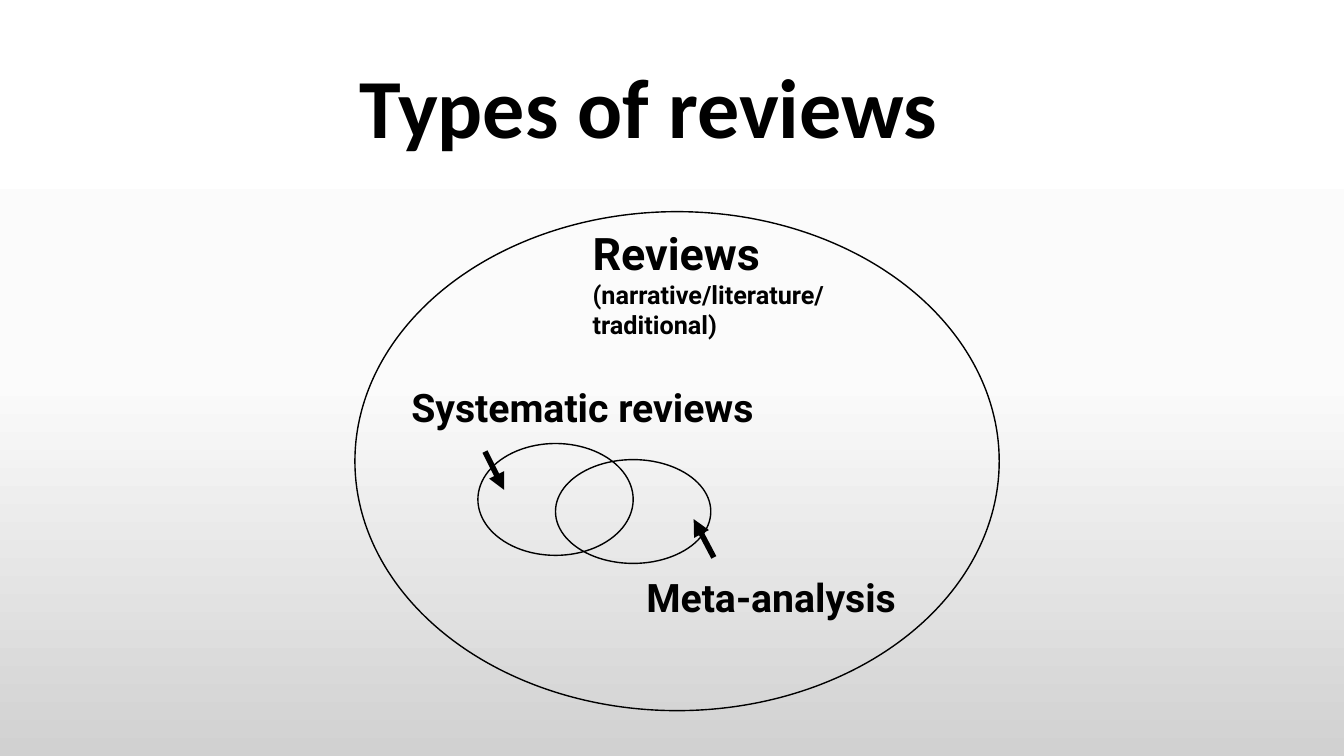
from copy import deepcopy

from lxml import etree
from pptx import Presentation
from pptx.dml.color import RGBColor
from pptx.enum.shapes import MSO_CONNECTOR, MSO_SHAPE
from pptx.enum.text import MSO_ANCHOR, MSO_AUTO_SIZE, PP_ALIGN
from pptx.oxml.ns import qn
from pptx.util import Inches, Pt

BLACK = RGBColor(0x00, 0x00, 0x00)
BACKGROUND_STOPS = [
    (0, RGBColor(0xFF, 0xFF, 0xFF)),
    (0.5, RGBColor(0xFB, 0xFB, 0xFB)),
    (1, RGBColor(0xD1, 0xD1, 0xD1)),
]
ELLIPSE = MSO_SHAPE.OVAL
STRAIGHT = MSO_CONNECTOR.STRAIGHT
BOTTOM = MSO_ANCHOR.BOTTOM
CENTER = PP_ALIGN.CENTER
GROW = MSO_AUTO_SIZE.SHAPE_TO_FIT_TEXT


def set_background(slide):
    fill = slide.background.fill
    fill.gradient()
    fill.gradient_angle = 270  # counter-clockwise, so top to bottom
    # A new gradient has two stops; add the middle one
    stop_list = slide.element.find(".//" + qn("a:gsLst"))
    stop_list.append(deepcopy(stop_list[0]))
    for stop, (position, color) in zip(fill.gradient_stops, BACKGROUND_STOPS):
        stop.position = position
        stop.color.rgb = color


def add_ellipse(slide, left, top, width, height):
    shape = slide.shapes.add_shape(
        ELLIPSE, Inches(left), Inches(top), Inches(width), Inches(height))
    shape.shadow.inherit = False
    shape.fill.background()
    shape.line.color.rgb = BLACK
    shape.line.width = Pt(1)


def add_text(slide, left, top, width, height, lines, font="Roboto",
             inset=(0.1, 0.05), wrap=False):
    """Add bold text; lines holds (text, size) pairs."""
    box = slide.shapes.add_textbox(
        Inches(left), Inches(top), Inches(width), Inches(height))
    text_frame = box.text_frame
    text_frame.word_wrap = wrap
    text_frame.margin_left = text_frame.margin_right = Inches(inset[0])
    text_frame.margin_top = text_frame.margin_bottom = Inches(inset[1])
    text_frame.text = "\n".join(text for text, size in lines)
    for paragraph, (text, size) in zip(text_frame.paragraphs, lines):
        run_font = paragraph.runs[0].font
        run_font.name = font
        run_font.size = Pt(size)
        run_font.bold = True
        run_font.color.rgb = BLACK
    return text_frame


def add_label(slide, left, top, width, text):
    text_frame = add_text(slide, left, top, width, 0.51, [(text, 28)],
                          inset=(0.05, 0.02))
    text_frame.auto_size = GROW


def add_arrow(slide, start_x, start_y, end_x, end_y):
    arrow = slide.shapes.add_connector(
        STRAIGHT, Inches(start_x), Inches(start_y),
        Inches(end_x), Inches(end_y))
    arrow.line.color.rgb = BLACK
    arrow.line.width = Pt(4)
    line = arrow.line._get_or_add_ln()
    etree.SubElement(line, qn("a:tailEnd"), type="triangle")
    properties = arrow._element.spPr
    etree.SubElement(properties, qn("a:effectLst"))


def main():
    presentation = Presentation()
    presentation.slide_width = Inches(13.33)
    presentation.slide_height = Inches(7.5)
    slide = presentation.slides.add_slide(presentation.slide_layouts[6])
    set_background(slide)

    # All reviews, with systematic reviews and meta-analysis overlapping inside
    add_ellipse(slide, 3.52, 2.1, 6.39, 4.95)
    add_ellipse(slide, 4.74, 4.4, 1.54, 1.11)
    add_ellipse(slide, 5.51, 4.56, 1.54, 1.03)

    # Labels
    add_label(slide, 6.36, 5.67, 2.68, "Meta-analysis")
    add_label(slide, 4.03, 3.78, 3.72, "Systematic reviews")
    reviews = add_text(slide, 5.78, 2.19, 2.57, 1.24, [
        ("Reviews", 32),
        ("(narrative/literature/", 18),
        ("traditional)", 18),
    ])
    reviews.auto_size = GROW

    # Arrows from the labels to the inner ellipses
    add_arrow(slide, 4.81, 4.48, 5, 4.86)
    add_arrow(slide, 7.08, 5.53, 6.88, 5.15)

    # Title
    title = add_text(slide, 2.18, 0, 8.5, 1.6, [("Types of reviews", 60)],
                     font="Calibri", wrap=True)
    title.vertical_anchor = BOTTOM
    title.paragraphs[0].alignment = CENTER
    title.paragraphs[0].line_spacing = 0.9

    presentation.save("out.pptx")


if __name__ == "__main__":
    main()
